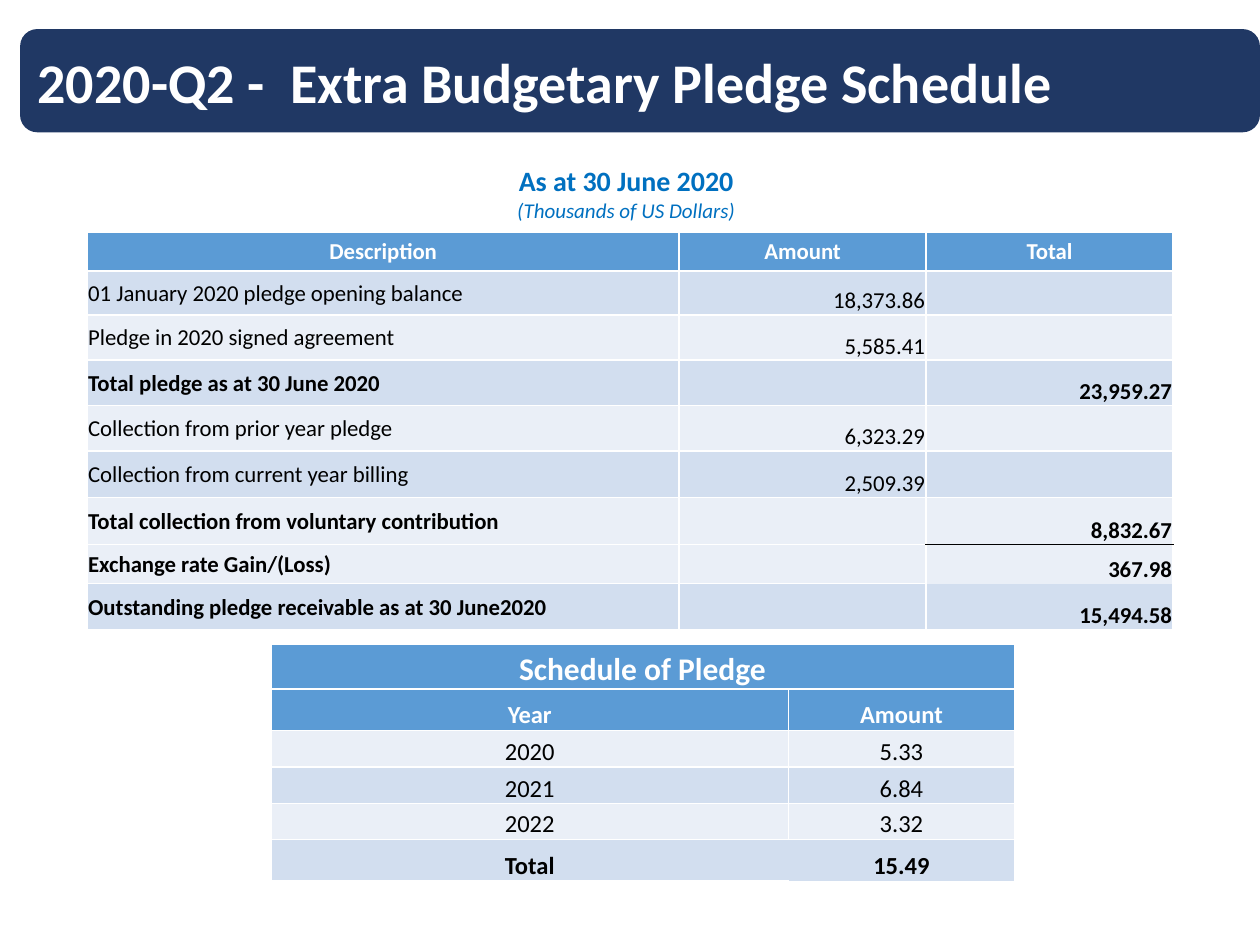
from dataclasses import dataclass, field

from pptx import Presentation
from pptx.dml.color import RGBColor
from pptx.enum.shapes import MSO_SHAPE
from pptx.enum.text import MSO_ANCHOR, PP_ALIGN
from pptx.oxml.xmlchemy import OxmlElement
from pptx.util import Pt


@dataclass(frozen=True)
class Theme:
    font: str = "Calibri"
    navy: str = "203864"
    blue: str = "0070C0"
    header: str = "5B9BD5"
    dark_band: str = "D2DEEF"
    light_band: str = "EAEFF7"
    white: str = "FFFFFF"
    black: str = "000000"
    title_size: float = 32
    schedule_size: float = 18
    date_size: float = 16
    year_size: float = 14
    pledge_size: float = 13
    unit_size: float = 12


THEME = Theme()
LEFT, CENTER, RIGHT = PP_ALIGN.LEFT, PP_ALIGN.CENTER, PP_ALIGN.RIGHT
MIDDLE, BOTTOM = MSO_ANCHOR.MIDDLE, MSO_ANCHOR.BOTTOM


@dataclass(frozen=True)
class Edge:
    width: float = 1
    color: str = THEME.white


THICK = Edge(1.5)
RULE = Edge(0.5, THEME.black)


@dataclass(frozen=True)
class Row:
    texts: tuple
    height: float
    fill: str
    size: float
    color: str = THEME.black
    bold: bool = False
    aligns: tuple = (CENTER, CENTER, CENTER)
    anchors: tuple = (BOTTOM, BOTTOM, BOTTOM)


@dataclass(frozen=True)
class Grid:
    left: float
    top: float
    widths: tuple
    rows: list
    below: dict = field(default_factory=dict)   # (row, column) -> Edge or None
    beside: dict = field(default_factory=dict)  # same, to the right of a cell


def set_formats(target, formats: dict) -> None:
    for name, value in formats.items():
        setattr(target, name, value)


def write(paragraph, text: str, size: float, color: str,
          align=LEFT, bold: bool = False, italic: bool = False) -> None:
    paragraph.alignment = align
    run = paragraph.add_run()
    run.text = text
    set_formats(run.font, {"name": THEME.font, "size": Pt(size),
                           "bold": bold, "italic": italic})
    run.font.color.rgb = RGBColor.from_string(color)


def add_border(cell, side: str, edge: Edge | None) -> None:
    line = OxmlElement(f"a:ln{side}")
    if edge is None:
        line.append(OxmlElement("a:noFill"))
    else:
        line.set("w", str(Pt(edge.width)))
        fill, color = OxmlElement("a:solidFill"), OxmlElement("a:srgbClr")
        color.set("val", edge.color)
        fill.append(color)
        line.append(fill)
    cell._tc.get_or_add_tcPr().append(line)


def fill_cell(cell, row: Row, column: int) -> None:
    cell.fill.solid()
    cell.fill.fore_color.rgb = RGBColor.from_string(row.fill)
    set_formats(cell, {"margin_left": Pt(0.7), "margin_right": Pt(0.7),
                       "margin_top": Pt(0.7), "margin_bottom": Pt(0),
                       "vertical_anchor": row.anchors[column]})
    paragraph = cell.text_frame.paragraphs[0]
    if row.texts[column]:
        write(paragraph, row.texts[column], row.size, row.color,
              row.aligns[column], row.bold)
    else:
        # Keeps an empty cell from stretching its row
        end = OxmlElement("a:endParaRPr")
        end.set("sz", str(int(row.size * 100)))
        paragraph._p.append(end)


def draw_grid(slide, grid: Grid):
    frame = slide.shapes.add_table(
        len(grid.rows), len(grid.widths), Pt(grid.left), Pt(grid.top),
        Pt(sum(grid.widths)), Pt(sum(row.height for row in grid.rows)))
    table = frame.table
    set_formats(table, {"first_row": False, "horz_banding": False})
    for column, width in zip(table.columns, grid.widths):
        column.width = Pt(width)
    for r, row in enumerate(grid.rows):
        table.rows[r].height = Pt(row.height)
        for c in range(len(grid.widths)):
            cell = table.cell(r, c)
            edges = {"L": grid.beside.get((r, c - 1), Edge()),
                     "R": grid.beside.get((r, c), Edge()),
                     "T": grid.below.get((r - 1, c), Edge()),
                     "B": grid.below.get((r, c), Edge())}
            for side, edge in edges.items():
                add_border(cell, side, edge)
            fill_cell(cell, row, c)
    return table


def header_row(texts: tuple, height: float, size: float, anchor=BOTTOM) -> Row:
    return Row(texts, height, THEME.header, size, THEME.white, True,
               anchors=(anchor,) * 3)


def pledge_row(description: str, amount: str, total: str, height: float,
               fill: str) -> Row:
    return Row((description, amount, total), height, fill, THEME.pledge_size,
               bold=not amount, aligns=(LEFT, RIGHT, RIGHT),
               anchors=(MIDDLE, BOTTOM, BOTTOM))


def year_row(year: str, amount: str, height: float, fill: str,
             bold: bool = False) -> Row:
    return Row((year, amount), height, fill, THEME.year_size, bold=bold)


DARK, LIGHT = THEME.dark_band, THEME.light_band

PLEDGES = Grid(49.7, 132.5, (338.4, 141.1, 141.1), [
    header_row(("Description", "Amount", "Total"), 22.3, THEME.pledge_size, MIDDLE),
    pledge_row("01 January 2020 pledge opening balance", "18,373.86", "", 25.2, DARK),
    pledge_row("Pledge in 2020 signed agreement", "5,585.41", "", 25.9, LIGHT),
    pledge_row("Total pledge as at 30 June 2020", "", "23,959.27", 25.9, DARK),
    pledge_row("Collection from prior year pledge", "6,323.29", "", 25.9, LIGHT),
    pledge_row("Collection from current year billing", "2,509.39", "", 26.8, DARK),
    pledge_row("Total collection from voluntary contribution", "", "8,832.67", 26.8, LIGHT),
    pledge_row("Exchange rate Gain/(Loss)", "", "367.98", 22.3, LIGHT),
    pledge_row("Outstanding pledge receivable as at 30 June2020", "", "15,494.58", 26.6, DARK),
], below={(0, 0): THICK, (0, 1): THICK, (0, 2): THICK, (2, 1): THICK,
          (4, 1): THICK, (6, 2): RULE, (7, 2): None})

SCHEDULE = Grid(154.8, 367.9, (295.9, 128.9), [
    header_row(("Schedule of Pledge", ""), 25.9, THEME.schedule_size),
    header_row(("Year", "Amount"), 23.6, THEME.year_size),
    year_row("2020", "5.33", 20.9, LIGHT),
    year_row("2021", "6.84", 20.9, DARK),
    year_row("2022", "3.32", 20.5, LIGHT),
    year_row("Total", "15.49", 23.6, DARK, bold=True),
], below={(2, 1): THICK, (5, 1): None}, beside={(5, 0): None, (5, 1): None})


def main() -> None:
    deck = Presentation()
    set_formats(deck, {"slide_width": Pt(720), "slide_height": Pt(540)})
    slide = deck.slides.add_slide(deck.slide_layouts[6])

    # Title banner
    banner = slide.shapes.add_shape(MSO_SHAPE.ROUNDED_RECTANGLE,
                                    Pt(11.5), Pt(16.6), Pt(708.5), Pt(59))
    banner.shadow.inherit = False
    banner.fill.solid()
    banner.fill.fore_color.rgb = RGBColor.from_string(THEME.navy)
    banner.line.fill.background()
    set_formats(banner.text_frame, {
        "word_wrap": True, "vertical_anchor": MIDDLE,
        "margin_left": Pt(7.2), "margin_right": Pt(7.2),
        "margin_top": Pt(7.2), "margin_bottom": Pt(7.2)})
    write(banner.text_frame.paragraphs[0],
          "2020-Q2 -  Extra Budgetary Pledge Schedule",
          THEME.title_size, THEME.white, bold=True)

    # Reporting date and unit
    caption = slide.shapes.add_textbox(Pt(136.1), Pt(90), Pt(443.5), Pt(41)).text_frame
    caption.word_wrap = True
    write(caption.paragraphs[0], "As at 30 June 2020", THEME.date_size,
          THEME.blue, CENTER, bold=True)
    write(caption.add_paragraph(), "(Thousands of US Dollars)", THEME.unit_size,
          THEME.blue, CENTER, italic=True)

    # Tables
    schedule = draw_grid(slide, SCHEDULE)
    schedule.cell(0, 0).merge(schedule.cell(0, 1))
    draw_grid(slide, PLEDGES)

    deck.save("out.pptx")


if __name__ == "__main__":
    main()
